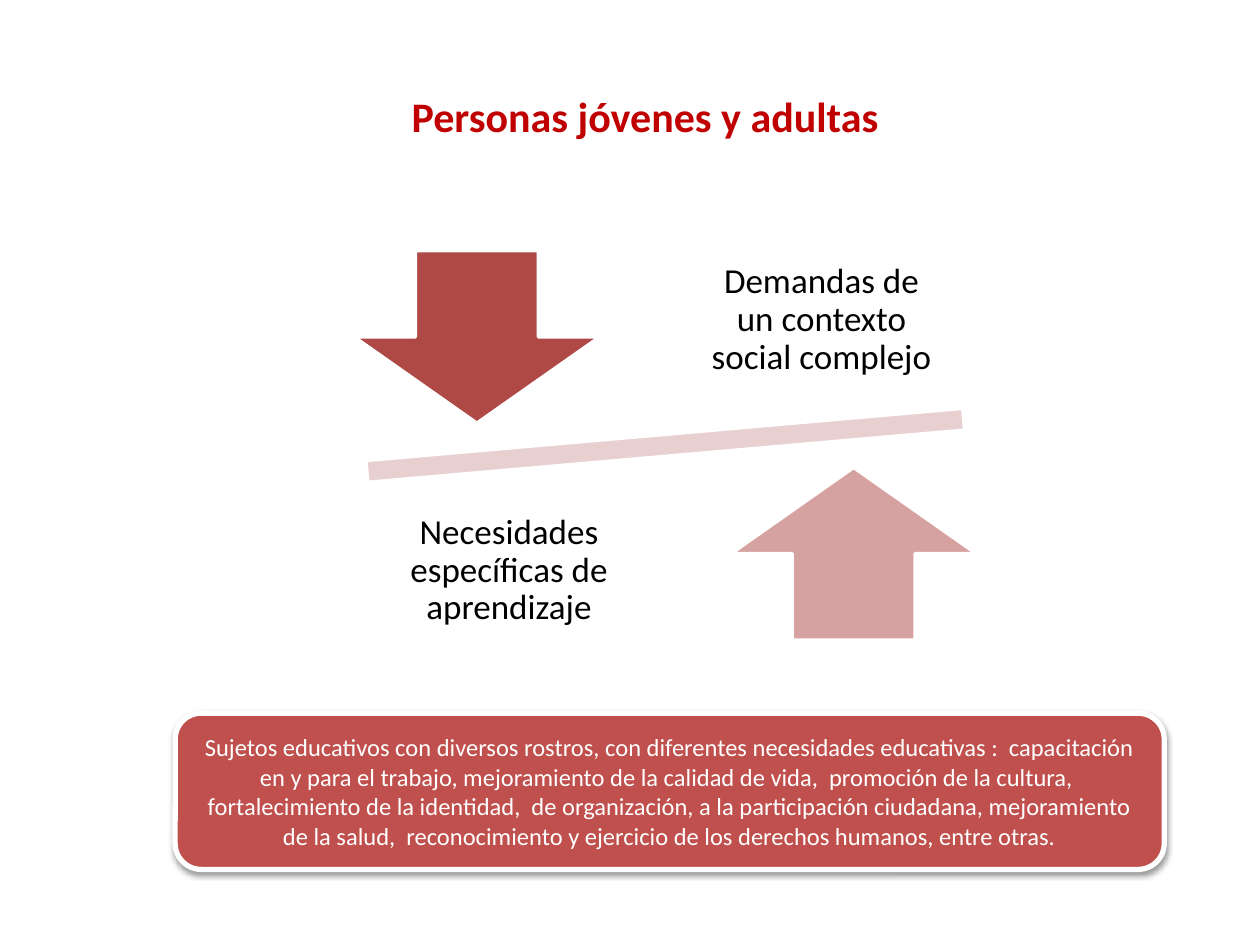
from dataclasses import dataclass

from lxml.etree import SubElement
from pptx import Presentation
from pptx.dml.color import RGBColor
from pptx.enum.shapes import MSO_SHAPE as Preset
from pptx.enum.text import MSO_ANCHOR as Anchor, PP_ALIGN as Align
from pptx.oxml.ns import qn
from pptx.util import Inches, Pt

COLUMN = Inches(10) / 100
ROW = Inches(7.5) / 100
CENTER_COLUMN, CENTER_ROW = 52.8, 47.13  # pivot of the balance diagram


@dataclass
class Area:
    """Left, top, width and height in columns and rows of a 100 x 100 grid."""
    left: float
    top: float
    width: float
    height: float

    def lengths(self) -> tuple:
        return (round(self.left * COLUMN), round(self.top * ROW),
                round(self.width * COLUMN), round(self.height * ROW))


@dataclass
class Side:
    """One arrow and its label; side is -1 above the pivot and 1 below it."""
    side: int
    arrow: Preset
    fill: str
    label: str


SIDES = [
    Side(-1, Preset.DOWN_ARROW, "AE4946", "Demandas de un contexto social complejo"),
    Side(1, Preset.UP_ARROW, "D6A2A1", "Necesidades específicas de aprendizaje"),
]
SUMMARY = (
    "Sujetos educativos con diversos rostros, con diferentes necesidades educativas :  "
    "capacitación en y para el trabajo, mejoramiento de la calidad de vida,  "
    "promoción de la cultura,  fortalecimiento de la identidad,  de organización, "
    "a la participación ciudadana, mejoramiento de la salud,  reconocimiento y "
    "ejercicio de los derechos humanos, entre otras."
)


def color(value: str) -> RGBColor:
    return RGBColor.from_string(value)


def around_pivot(columns: float, rows: float, width: float, height: float) -> Area:
    """Area whose middle lies the given columns and rows away from the pivot."""
    return Area(CENTER_COLUMN + columns - width / 2,
                CENTER_ROW + rows - height / 2, width, height)


def add_preset(shapes, preset: Preset, area: Area, fill: str, line_width: float):
    shape = shapes.add_shape(preset, *area.lengths())
    shape.shadow.inherit = False
    shape.fill.solid()
    shape.fill.fore_color.rgb = color(fill)
    shape.line.color.rgb = color("FFFFFF")
    shape.line.width = Pt(line_width)
    return shape


def write(shape, text: str, size: int, ink: str, bold: bool = False):
    frame = shape.text_frame
    frame.text = text
    frame.word_wrap = True
    frame.vertical_anchor = Anchor.MIDDLE
    para = frame.paragraphs[0]
    para.alignment = Align.CENTER
    font = para.runs[0].font
    font.name, font.size, font.bold = "Calibri", Pt(size), bold
    font.color.rgb = color(ink)
    return frame


def add_label(shapes, area: Area, text: str) -> None:
    frame = write(shapes.add_textbox(*area.lengths()), text, 20, "000000")
    frame.margin_left = frame.margin_right = Inches(0.16)
    frame.margin_top = frame.margin_bottom = Inches(0.16)
    frame.paragraphs[0].line_spacing = 0.9


def add_shadow(shape) -> None:
    effects = shape._element.spPr.find(qn("a:effectLst"))
    shadow = SubElement(effects, qn("a:outerShdw"), blurRad=str(Pt(3.1)),
                        dist=str(Pt(1.6)), dir="5400000", rotWithShape="0")
    ink = SubElement(shadow, qn("a:srgbClr"), val="000000")
    SubElement(ink, qn("a:alpha"), val="38000")


def add_balance(page) -> None:
    shapes = page.shapes.add_group_shape().shapes
    bar = add_preset(shapes, Preset.MATH_MINUS, around_pivot(0, 0, 64.7, 9.87),
                     "E8D0D0", 2)
    bar.rotation = 355
    for item in SIDES:
        arrow_area = around_pivot(14.95 * item.side, 11.47 * item.side, 19.5, 18.27)
        label_area = around_pivot(-12.4 * item.side, 13.27 * item.side, 20.8, 19.2)
        add_preset(shapes, item.arrow, arrow_area, item.fill, 2)
        add_label(shapes, label_area, item.label)


def main() -> None:
    deck = Presentation()
    deck.slide_width, deck.slide_height = Inches(10), Inches(7.5)
    page = deck.slides.add_slide(deck.slide_layouts[5])

    title = page.shapes.title
    title.left, title.top, title.width, title.height = Area(6.2, 3.87, 90, 16.67).lengths()
    write(title, "Personas jóvenes y adultas", 24, "C00000", bold=True)

    add_balance(page)

    summary = add_preset(page.shapes, Preset.ROUNDED_RECTANGLE,
                         Area(13.9, 75.47, 78.5, 16.53), "C0504D", 3)
    add_shadow(summary)
    write(summary, SUMMARY, 14, "FFFFFF")

    deck.save("out.pptx")


if __name__ == "__main__":
    main()
